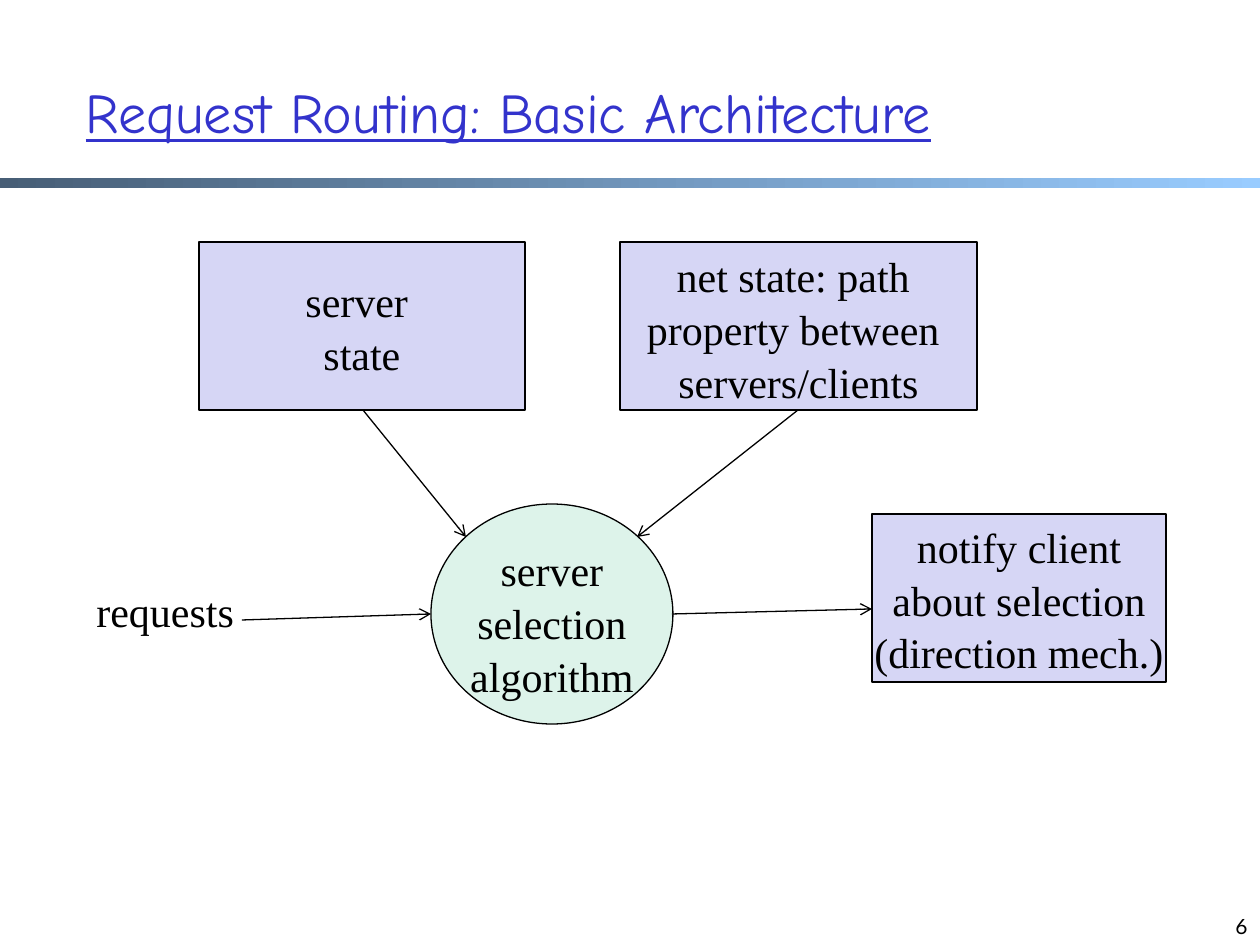
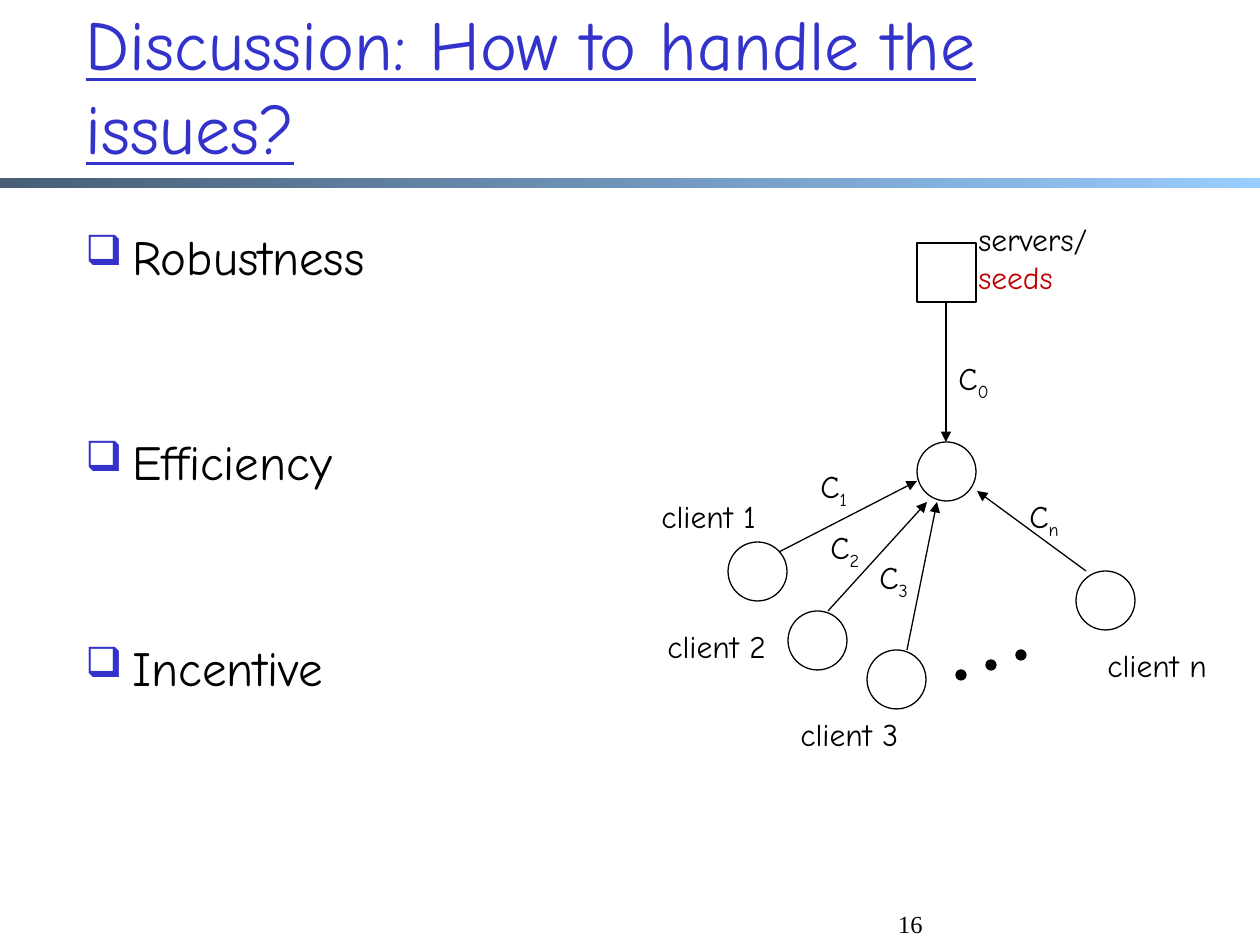
from pptx import Presentation, util as u
from pptx.dml.color import RGBColor
from pptx.enum import shapes as sh, text as tx
from pptx.oxml import parse_xml
from pptx.oxml.ns import nsdecls

INK, BLUE, LILAC, MINT, RED = "000000", "3333CC", "D6D6F5", "DDF3EA", "C00000"
COMIC, TIMES, LATO = "Comic Neue", "Times New Roman", "Lato"
RECT, OVAL = sh.MSO_SHAPE.RECTANGLE, sh.MSO_SHAPE.OVAL
LEFT, MID, RIGHT = tx.PP_ALIGN.LEFT, tx.PP_ALIGN.CENTER, tx.PP_ALIGN.RIGHT
TOP, CORE, BASE = tx.MSO_ANCHOR.TOP, tx.MSO_ANCHOR.MIDDLE, tx.MSO_ANCHOR.BOTTOM

BAND = (0, 178, 1260, 10)
STOPS = ["475E76", "99CCFF"]
HEAD = dict(size=32, name=COMIC, color=BLUE, underline=True)
NODE = dict(size=24, name=TIMES)
LABEL = dict(size=18, name=COMIC)
POINT = dict(size=28, name=COMIC)

BOXES = [
    (RECT, (199, 242, 326, 168), LILAC, CORE, ["server ", "state"]),
    (RECT, (620, 242, 357, 168), LILAC, TOP,
     ["net state: path ", "property between ", "servers/clients"]),
    (OVAL, (431, 504, 242, 220), MINT, TOP, ["server", "selection", "algorithm"]),
    (RECT, (872, 514, 294, 168), LILAC, CORE,
     ["notify client", "about selection", "(direction mech.)"]),
]
FLOWS = [(363, 410, 466, 537), (798, 410, 637, 537),
         (242, 620, 431, 614), (672, 614, 872, 609)]

POINTS = ["Robustness", "Efficiency", "Incentive"]
SIZE = 59
SEED = (917, 243)
HUB = (917, 442)
CLIENTS = [
    ("1", (728, 542), (649, 491), (808, 461), (779, 552, 917, 481)),
    ("2", (788, 611), (655, 621), (818, 522), (828, 611, 927, 502)),
    ("3", (867, 650), (788, 709), (867, 552), (907, 650, 937, 502)),
    ("n", (1076, 571), (1095, 640), (1017, 491), (1086, 571, 977, 491)),
]
DOT, DOTS, RISE = (956, 670), 3, (30, -10)


def px(n):
    return u.Emu(round(n * 914400 / 126))


def hue(code):
    return RGBColor.from_string(code)


def write(shape, lines, font, align=LEFT, anchor=TOP, wrap=True, tint={}):
    frame = shape.text_frame
    look = dict(word_wrap=wrap, vertical_anchor=anchor,
                auto_size=tx.MSO_AUTO_SIZE.NONE, margin_left=u.Inches(0.1),
                margin_right=u.Inches(0.1), margin_top=u.Inches(0.05),
                margin_bottom=u.Inches(0.05))
    for key, val in look.items():
        setattr(frame, key, val)
    for i, line in enumerate(lines):
        para = frame.add_paragraph() if i else frame.paragraphs[0]
        para.alignment = align
        if font["name"] == TIMES:
            para.line_spacing = 1.05
        for j, part in enumerate(line.split("_")):
            run = para.add_run()
            run.text = part
            for key, val in font.items():
                if key != "color":
                    setattr(run.font, key, u.Pt(val) if key == "size" else val)
            run.font.color.rgb = hue(tint.get(line, font.get("color", INK)))
            if j:
                run._r.get_or_add_rPr().set("baseline", "-25000")


def label(slide, at, lines, font, **look):
    box = slide.shapes.add_textbox(*map(px, at))
    write(box, lines, font, **look)
    return box


def draw(slide, kind, at, fill=None):
    shape = slide.shapes.add_shape(kind, *map(px, at))
    shape.shadow.inherit = False
    if fill:
        shape.fill.solid()
        shape.fill.fore_color.rgb = hue(fill)
    else:
        shape.fill.background()
    shape.line.color.rgb = hue(INK)
    shape.line.width = u.Pt(0.75)
    return shape


def arrow(slide, ends, tip):
    line = slide.shapes.add_connector(sh.MSO_CONNECTOR.STRAIGHT, *map(px, ends))
    line.line.color.rgb = hue(INK)
    line.line.width = u.Pt(0.75)
    line.line._get_or_add_ln().append(
        parse_xml(f'<a:tailEnd {nsdecls("a")} type="{tip}"/>'))
    line._element.spPr.append(parse_xml(f'<a:effectLst {nsdecls("a")}/>'))


def start(deck, title, top, size):
    slide = deck.slides.add_slide(deck.slide_layouts[5])
    band = draw(slide, RECT, BAND)
    band.line.fill.background()
    band.fill.gradient()
    band.fill.gradient_angle = 0
    for stop, code in zip(band.fill.gradient_stops, STOPS):
        stop.color.rgb = hue(code)
    head = slide.shapes.title
    for key, val in zip(("left", "top", "width", "height"), (73, top, 1071, 158)):
        setattr(head, key, px(val))
    write(head, [title], {**HEAD, "size": size}, anchor=CORE)
    return slide


def routing(deck):
    slide = start(deck, "Request Routing: Basic Architecture", 32, 32)
    for kind, at, fill, anchor, lines in BOXES:
        write(draw(slide, kind, at, fill), lines, NODE, MID, anchor, False)
    for ends in FLOWS:
        arrow(slide, ends, "arrow")
    label(slide, (84, 577, 164, 63), ["requests"], NODE, wrap=False)
    label(slide, (966, 882, 294, 63), ["6"], dict(size=12, name=LATO),
          align=RIGHT, anchor=BASE)


def bullets(slide):
    body = label(slide, (73, 220, 547, 640), POINTS, POINT)
    for i, para in enumerate(body.text_frame.paragraphs):
        para.space_before = u.Pt(84 if i else 0)
        props = para._p.get_or_add_pPr()
        props.set("marL", str(px(47)))
        props.set("indent", str(-px(47)))
        for tag in (f'buClr {nsdecls("a")}><a:srgbClr val="{BLUE}"/></a:buClr',
                    f'buSzPct {nsdecls("a")} val="85000"/',
                    f'buChar {nsdecls("a")} char="❑"/'):
            props.append(parse_xml(f"<a:{tag}>"))


def issues(deck):
    slide = start(deck, "Discussion: How to handle the issues?", 6, 40)
    bullets(slide)
    label(slide, (389, 882, 546, 63), ["16"], dict(size=14, name=TIMES),
          align=RIGHT, anchor=BASE)
    draw(slide, RECT, (*SEED, SIZE, SIZE))
    draw(slide, OVAL, (*HUB, SIZE, SIZE))
    arrow(slide, (946, 303, 946, 442), "triangle")
    label(slide, (966, 214, 169, 89), ["servers/", "seeds"], LABEL,
          tint={"seeds": RED})
    label(slide, (946, 353, 89, 50), ["C_0"], LABEL)
    for name, spot, tag, cap, ends in CLIENTS:
        draw(slide, OVAL, (*spot, SIZE, SIZE))
        arrow(slide, ends, "triangle")
        label(slide, (*tag, 139, 50), [f"client {name}"], LABEL)
        label(slide, (*cap, 89, 50), [f"C_{name}"], LABEL)
    for i in range(DOTS):
        left, top = (a + i * b for a, b in zip(DOT, RISE))
        draw(slide, OVAL, (left, top, 10, 10), INK)


def main():
    deck = Presentation()
    deck.slide_width, deck.slide_height = px(1260), px(945)
    routing(deck)
    issues(deck)
    deck.save("out.pptx")


if __name__ == "__main__":
    main()
